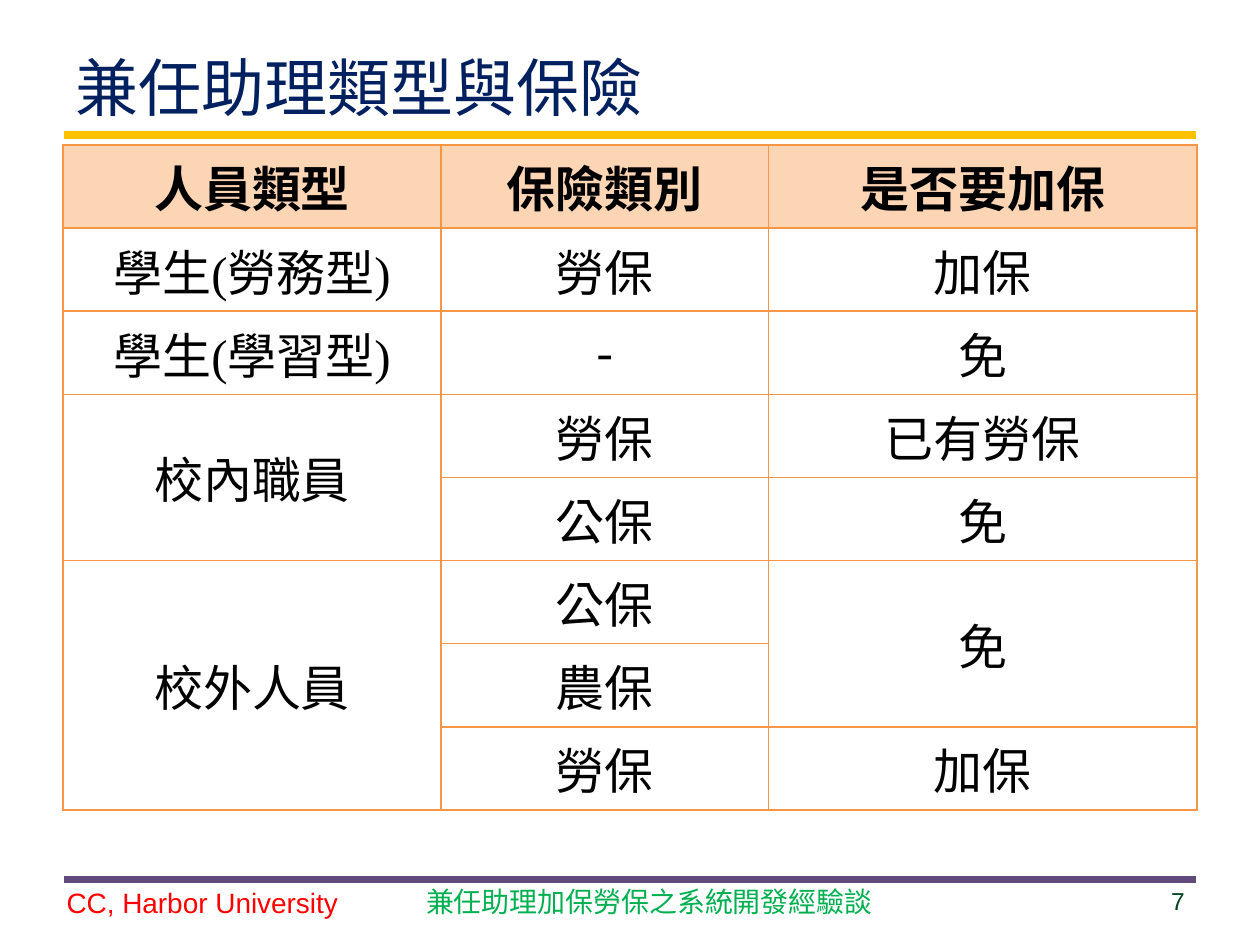
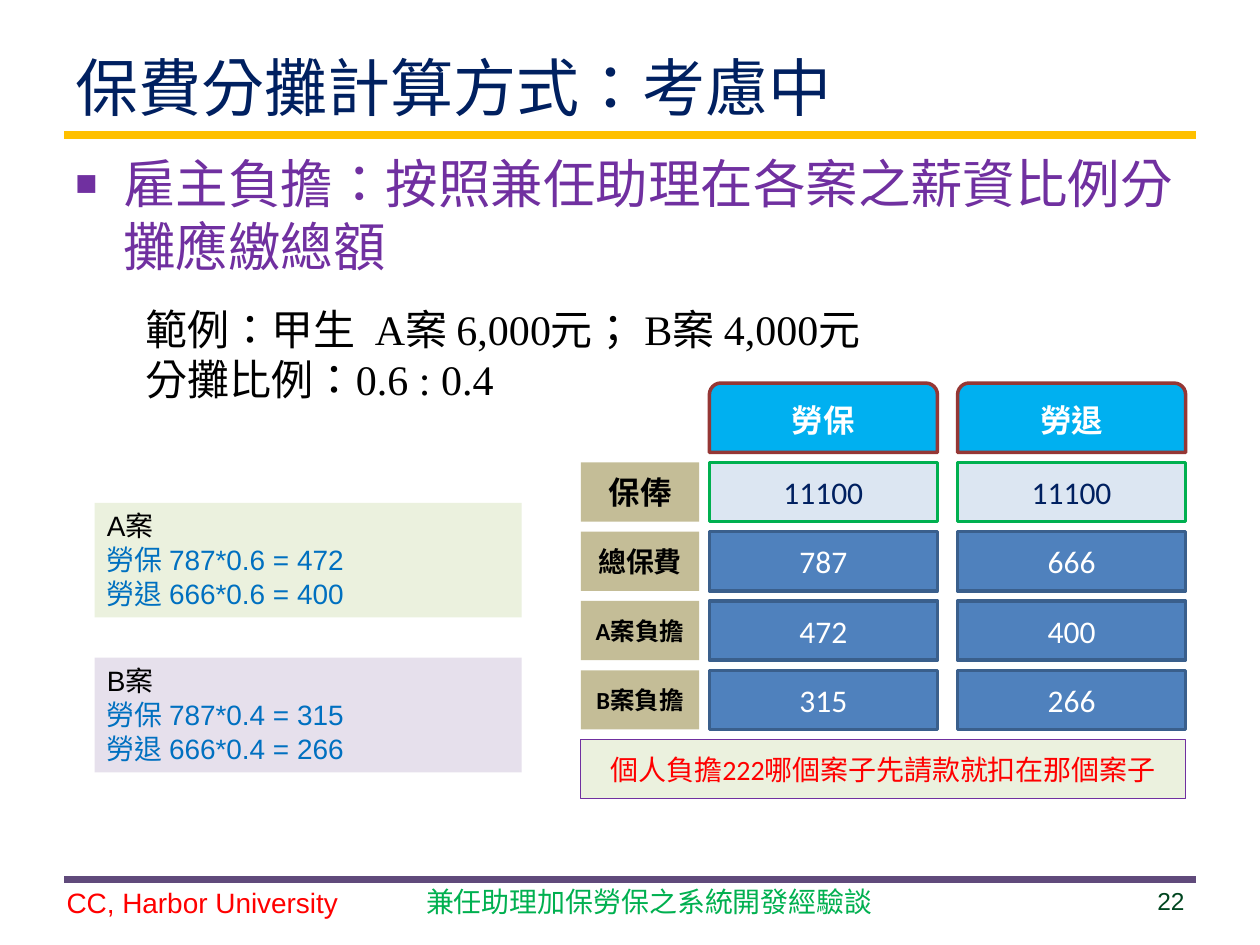
from lxml import etree
from pptx import Presentation
from pptx.dml.color import RGBColor
from pptx.enum.lang import MSO_LANGUAGE_ID
from pptx.enum.shapes import MSO_CONNECTOR, MSO_SHAPE
from pptx.enum.text import MSO_ANCHOR, PP_ALIGN
from pptx.oxml.ns import qn
from pptx.util import Inches, Pt

LEFT, CENTER, RIGHT = PP_ALIGN.LEFT, PP_ALIGN.CENTER, PP_ALIGN.RIGHT
TOP, MIDDLE = MSO_ANCHOR.TOP, MSO_ANCHOR.MIDDLE
RECTANGLE = MSO_SHAPE.RECTANGLE
ROUNDED_TOP = MSO_SHAPE.ROUND_2_SAME_RECTANGLE
STRAIGHT = MSO_CONNECTOR.STRAIGHT
CHINESE = MSO_LANGUAGE_ID.TRADITIONAL_CHINESE

NAVY, GOLD, PLUM, PURPLE = "002060", "FFC000", "604A7B", "7030A0"
RED, GREEN, DARK_GREEN = "FF0000", "00B050", "004620"
ORANGE, PEACH, BLACK, WHITE = "F79646", "FCD5B5", "000000", "FFFFFF"
SKY, MAROON, PALE_BLUE = "00B0F0", "953735", "DCE6F2"
BLUE, DARK_BLUE, TEXT_BLUE = "4F81BD", "3A5F8C", "0070C0"
TAN, PALE_GREEN, LILAC = "C4BD97", "EBF1DE", "E6E0EC"
SANS, SERIF, LABEL = "Arial", "Times New Roman", "Calibri"


def color(value):
    return RGBColor.from_string(value)


def write(frame, text, size=16, font=SANS, ink=BLACK, bold=False,
          align=LEFT, anchor=TOP, rest_ink=None):
    frame.word_wrap = True
    frame.vertical_anchor = anchor
    for index, line in enumerate(text.split("\n")):
        para = frame.add_paragraph() if index else frame.paragraphs[0]
        para.alignment = align
        span = para.add_run()
        span.text = line
        span.font.size = Pt(size)
        span.font.name = font
        span.font.bold = bold
        span.font.language_id = CHINESE
        span.font.color.rgb = color(rest_ink if index and rest_ink else ink)


class Builder:
    def __init__(self):
        self.deck = Presentation()
        self.deck.slide_width = Inches(10)
        self.deck.slide_height = Inches(7.5)
        self.page = None

    def start_page(self, title, number):
        self.page = self.deck.slides.add_slide(self.deck.slide_layouts[5])
        self.rule(1.07, GOLD)
        self.rule(6.98, PLUM)
        box = self.page.shapes.title
        box.left, box.top = Inches(0.5), Inches(0.3)
        box.width, box.height = Inches(9), Inches(0.77)
        write(box.text_frame, title, size=36, ink=NAVY, anchor=MIDDLE)
        self.text(0.43, 6.98, 2.6, 0.37, "CC, Harbor University", ink=RED)
        self.text(2.95, 6.95, 4.41, 0.4, "兼任助理加保勞保之系統開發經驗談",
                  ink=GREEN, align=CENTER, anchor=MIDDLE)
        self.text(8.31, 6.95, 1.19, 0.4, str(number), size=14,
                  ink=DARK_GREEN, align=RIGHT, anchor=MIDDLE)

    def rule(self, top, ink):
        line = self.page.shapes.add_connector(
            STRAIGHT, Inches(0.51), Inches(top), Inches(9.49), Inches(top))
        line.line.color.rgb = color(ink)
        line.line.width = Pt(4.5)
        etree.SubElement(line._element.spPr, qn("a:effectLst"))

    def text(self, left, top, width, height, text, **style):
        box = self.page.shapes.add_textbox(
            Inches(left), Inches(top), Inches(width), Inches(height))
        write(box.text_frame, text, **style)
        return box

    def bullet(self, left, top, width, height, text, **style):
        box = self.text(left, top, width, height, text, **style)
        para = box.text_frame.paragraphs[0]
        para.space_before = Pt(6)
        props = para._p.get_or_add_pPr()
        props.set("marL", str(Inches(0.38)))
        props.set("indent", str(-Inches(0.38)))
        tint = etree.SubElement(props, qn("a:buClr"))
        etree.SubElement(tint, qn("a:srgbClr"), val=style["ink"])
        etree.SubElement(props, qn("a:buSzPct"), val="70000")
        etree.SubElement(props, qn("a:buFont"), typeface=SANS)
        etree.SubElement(props, qn("a:buChar"), char="■")

    def shape(self, left, top, width, height, text, fill, kind=RECTANGLE,
              line=None, weight=2, **style):
        box = self.page.shapes.add_shape(
            kind, Inches(left), Inches(top), Inches(width), Inches(height))
        box.shadow.inherit = False
        box.fill.solid()
        box.fill.fore_color.rgb = color(fill)
        if line:
            box.line.color.rgb = color(line)
            box.line.width = Pt(weight)
        else:
            box.line.fill.background()
        write(box.text_frame, text, **style)

    def table(self, left, top, widths, row_height, rows, merges):
        table = self.page.shapes.add_table(
            len(rows), len(widths), Inches(left), Inches(top),
            Inches(sum(widths)), Inches(row_height * len(rows))).table
        table.first_row = table.horz_banding = False
        for column, width in zip(table.columns, widths):
            column.width = Inches(width)
        for r, values in enumerate(rows):
            for c, value in enumerate(values):
                cell = table.cell(r, c)
                if value:
                    write(cell.text_frame, value, size=28, font=SERIF,
                          bold=r == 0, align=CENTER)
                cell.vertical_anchor = MIDDLE
                self.border(cell)
                if r == 0:
                    cell.fill.solid()
                    cell.fill.fore_color.rgb = color(PEACH)
                else:
                    cell.fill.background()
        for column, first, last in merges:
            table.cell(first, column).merge(table.cell(last, column))

    def border(self, cell):
        props = cell._tc.get_or_add_tcPr()
        for side in ("lnL", "lnR", "lnT", "lnB"):
            edge = etree.SubElement(props, qn("a:" + side), w=str(Pt(1)))
            fill = etree.SubElement(edge, qn("a:solidFill"))
            etree.SubElement(fill, qn("a:srgbClr"), val=ORANGE)


def insurance_types(builder):
    builder.start_page("兼任助理類型與保險", 7)
    rows = [
        ("人員類型", "保險類別", "是否要加保"),
        ("學生(勞務型)", "勞保", "加保"),
        ("學生(學習型)", "-", "免"),
        ("校內職員", "勞保", "已有勞保"),
        ("", "公保", "免"),
        ("校外人員", "公保", "免"),
        ("", "農保", ""),
        ("", "勞保", "加保"),
    ]
    builder.table(0.5, 1.15, (3, 2.6, 3.4), 0.66, rows,
                  [(0, 3, 4), (0, 5, 7), (2, 5, 6)])


def premium_sharing(builder):
    builder.start_page("保費分攤計算方式：考慮中", 22)
    builder.bullet(0.5, 1.15, 9, 1.2,
                   "雇主負擔：按照兼任助理在各案之薪資比例分攤應繳總額",
                   size=30, ink=PURPLE)

    label_left, value_lefts, value_width = 4.61, (5.63, 7.6), 1.81
    first_top, row_step, row_height = 3.67, 0.55, 0.47
    centered = dict(font=LABEL, align=CENTER, anchor=MIDDLE)
    for left, heading in zip(value_lefts, ("勞保", "勞退")):
        builder.shape(left, 3.04, value_width, 0.55, heading, SKY, ROUNDED_TOP,
                      MAROON, size=18, ink=WHITE, bold=True, **centered)
    salary = dict(fill=PALE_BLUE, line=GREEN, weight=1.5, ink=NAVY)
    amount = dict(fill=BLUE, line=DARK_BLUE, ink=WHITE)
    premium_rows = [
        ("保俸", 18, ("11100", "11100"), salary),
        ("總保費", 16, ("787", "666"), amount),
        ("A案負擔", 14, ("472", "400"), amount),
        ("B案負擔", 14, ("315", "266"), amount),
    ]
    for index, (label, size, values, look) in enumerate(premium_rows):
        top = first_top + index * row_step
        builder.shape(label_left, top, 0.94, row_height, label, TAN,
                      size=size, bold=True, **centered)
        for left, value in zip(value_lefts, values):
            builder.shape(left, top, value_width, row_height, value,
                          size=18, **look, **centered)
    builder.shape(label_left, first_top + len(premium_rows) * row_step, 4.8,
                  row_height, "個人負擔222哪個案子先請款就扣在那個案子",
                  PALE_GREEN, line=PURPLE, weight=0.5, ink=RED, **centered)

    cases = [
        (3.99, PALE_GREEN, "A案\n勞保 787*0.6 = 472\n勞退 666*0.6 = 400"),
        (5.22, LILAC, "B案\n勞保 787*0.4 = 315\n勞退 666*0.4 = 266"),
    ]
    for top, fill, text in cases:
        builder.shape(0.75, top, 3.39, 0.91, text, fill, rest_ink=TEXT_BLUE)
    builder.text(1.06, 2.36, 5.95, 1.3,
                 "範例：甲生  A案 6,000元； B案 4,000元\n分攤比例：0.6 : 0.4",
                 size=24, font=SERIF)


def main():
    builder = Builder()
    insurance_types(builder)
    premium_sharing(builder)
    builder.deck.save("out.pptx")


if __name__ == "__main__":
    main()
